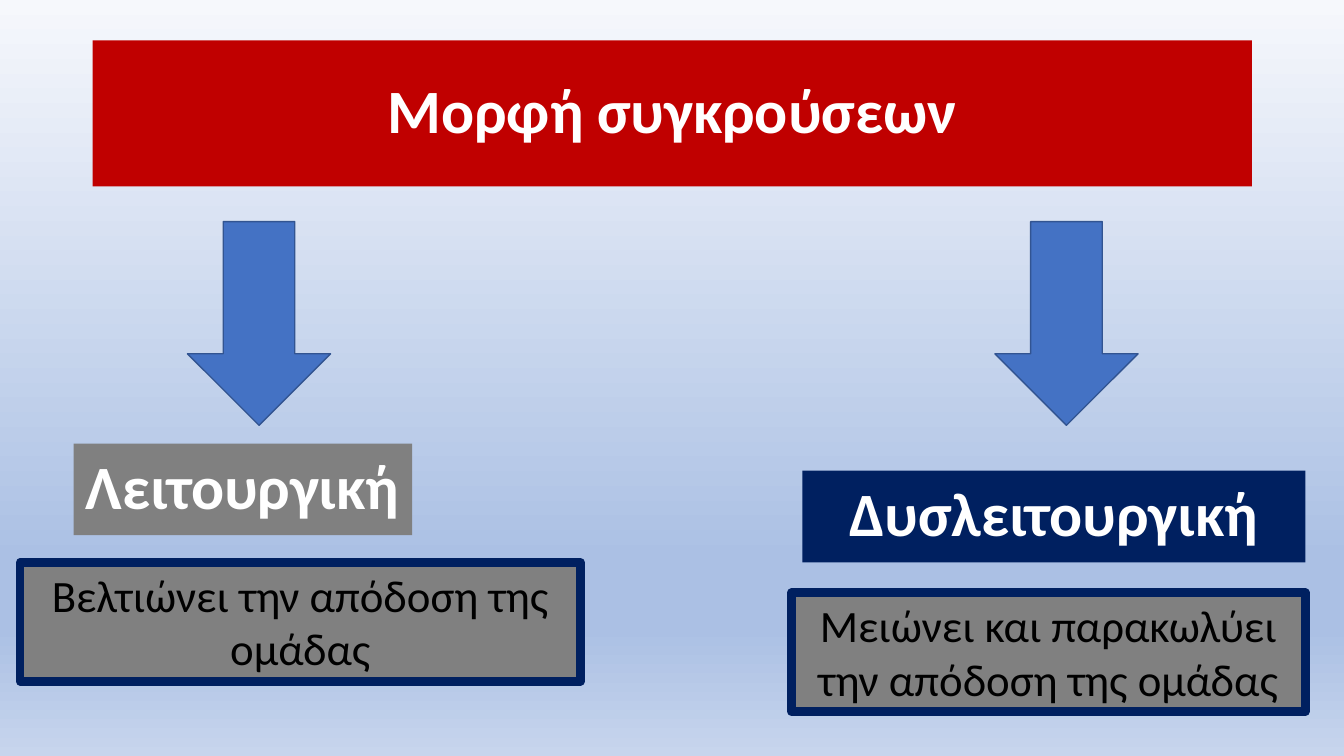
"""Build a slide on the two forms of team conflict."""
from copy import deepcopy
from pptx import Presentation
from pptx.dml.color import RGBColor
from pptx.enum.shapes import MSO_SHAPE
from pptx.enum.text import MSO_ANCHOR, MSO_AUTO_SIZE, PP_ALIGN
from pptx.oxml.ns import qn
from pptx.util import Inches, Pt

RED = RGBColor(0xC0, 0x00, 0x00)
BLUE = RGBColor(0x44, 0x72, 0xC4)
EDGE = RGBColor(0x32, 0x54, 0x91)
NAVY = RGBColor(0x00, 0x20, 0x60)
GREY = RGBColor(0x80, 0x80, 0x80)
WHITE = RGBColor(0xFF, 0xFF, 0xFF)
BLACK = RGBColor(0x00, 0x00, 0x00)
PALE = RGBColor(0xF6, 0xF8, 0xFC)
SKY = RGBColor(0xAB, 0xC0, 0xE4)
MIST = RGBColor(0xC7, 0xD5, 0xED)

HEAD = {"size": Pt(44), "bold": True, "color": WHITE, "space": 0.9,
        "anchor": MSO_ANCHOR.MIDDLE, "inset": Inches(0.05)}
BODY = {"size": Pt(32), "bold": False, "color": BLACK, "space": 1.0,
        "anchor": MSO_ANCHOR.TOP, "inset": Inches(0.1)}

deck = Presentation()
deck.slide_width, deck.slide_height = Inches(13.33), Inches(7.5)
slide = deck.slides.add_slide(deck.slide_layouts[5])


def paint(shape, box, fill, line=None, width=0):
    """Place a shape by percent of the slide and color it."""
    sides = ("left", "top", "width", "height")
    spans = (deck.slide_width, deck.slide_height) * 2
    for side, share, span in zip(sides, box, spans):
        setattr(shape, side, round(span * share / 100))
    shape.fill.solid()
    shape.fill.fore_color.rgb = fill
    if line is None:
        shape.line.fill.background()
    else:
        shape.line.color.rgb = line
        shape.line.width = Pt(width)


def write(shape, text, style):
    """Fill a shape with one centered paragraph."""
    frame = shape.text_frame
    frame.text = text
    form = {"word_wrap": True, "auto_size": MSO_AUTO_SIZE.NONE,
            "vertical_anchor": style["anchor"],
            "margin_left": style["inset"], "margin_right": style["inset"]}
    for name, value in form.items():
        setattr(frame, name, value)
    para = frame.paragraphs[0]
    para.alignment = PP_ALIGN.CENTER
    para.line_spacing = style["space"]
    font = para.runs[0].font
    for name, value in {"name": "Calibri", "size": style["size"],
                        "bold": style["bold"]}.items():
        setattr(font, name, value)
    font.color.rgb = style["color"]


back = slide.background.fill
back.gradient()
back.gradient_angle = 270
stops = slide.element.find(".//" + qn("a:gsLst"))
for _ in range(2):
    stops.append(deepcopy(stops[0]))
tones = ((0, PALE), (0.74, SKY), (0.83, SKY), (1, MIST))
for stop, (place, tone) in zip(back.gradient_stops, tones):
    stop.position = place
    stop.color.rgb = tone

title = slide.shapes.title
paint(title, (6.9, 5.33, 86.25, 19.33), RED)
write(title, "Μορφή συγκρούσεων", HEAD)

for left in (74.03, 13.95):
    arrow = slide.shapes.add_shape(MSO_SHAPE.DOWN_ARROW, 0, 0, 0, 0)
    arrow.shadow.inherit = False
    paint(arrow, (left, 29.33, 10.65, 26.93), BLUE, EDGE, 1)

cards = (
    ("Λειτουργική", HEAD, (5.48, 58.67, 25.2, 12.13), GREY, None),
    ("Δυσλειτουργική", HEAD, (59.7, 62.27, 37.43, 12.13), NAVY, None),
    ("Βελτιώνει την απόδοση της ομάδας", BODY,
     (1.5, 74.4, 41.7, 15.73), GREY, NAVY),
    ("Μειώνει και παρακωλύει την απόδοση της ομάδας", BODY,
     (58.88, 78.4, 38.25, 15.73), GREY, NAVY),
)
for text, style, box, fill, line in cards:
    card = slide.shapes.add_textbox(0, 0, 0, 0)
    paint(card, box, fill, line, 6)
    write(card, text, style)

deck.save("out.pptx")
